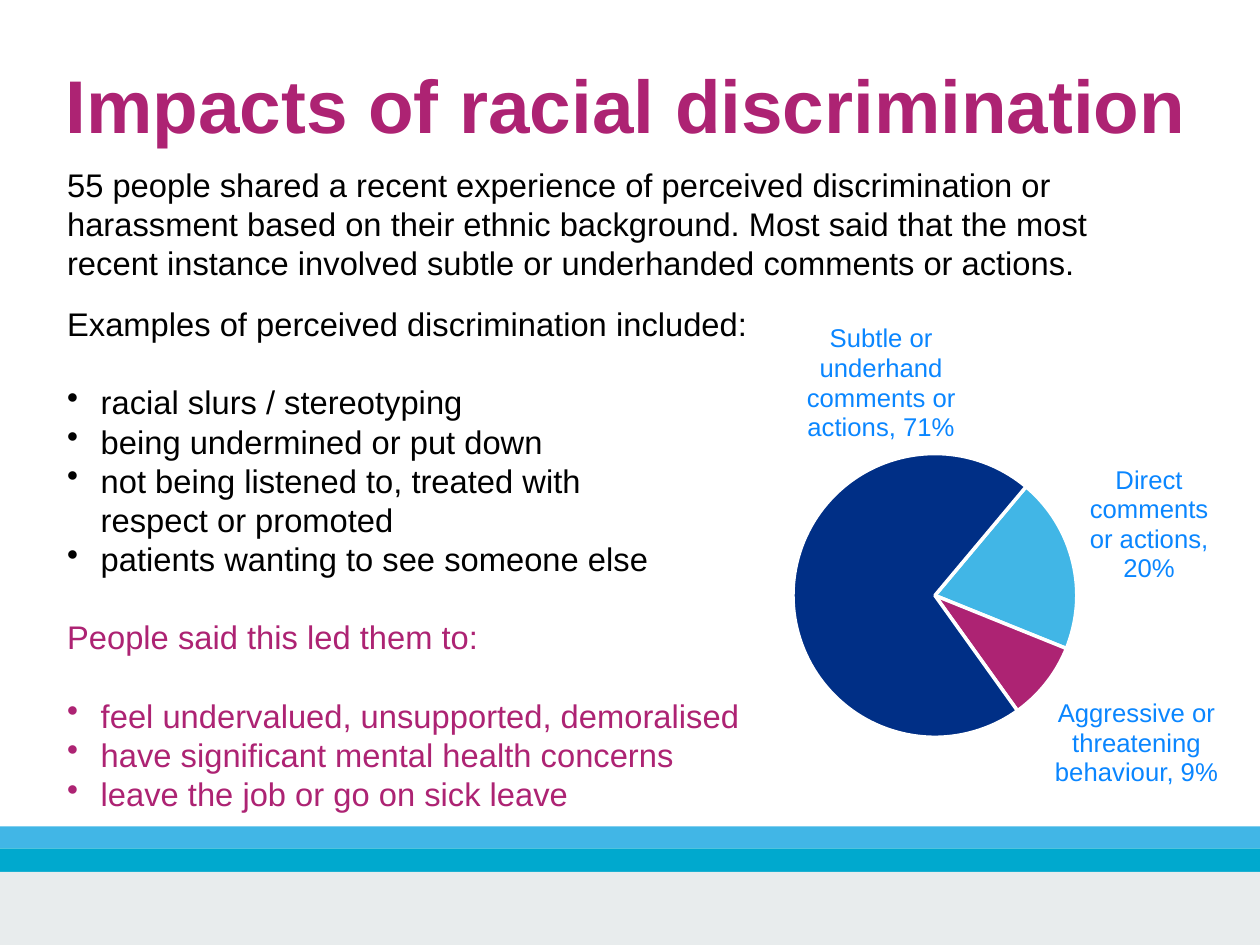
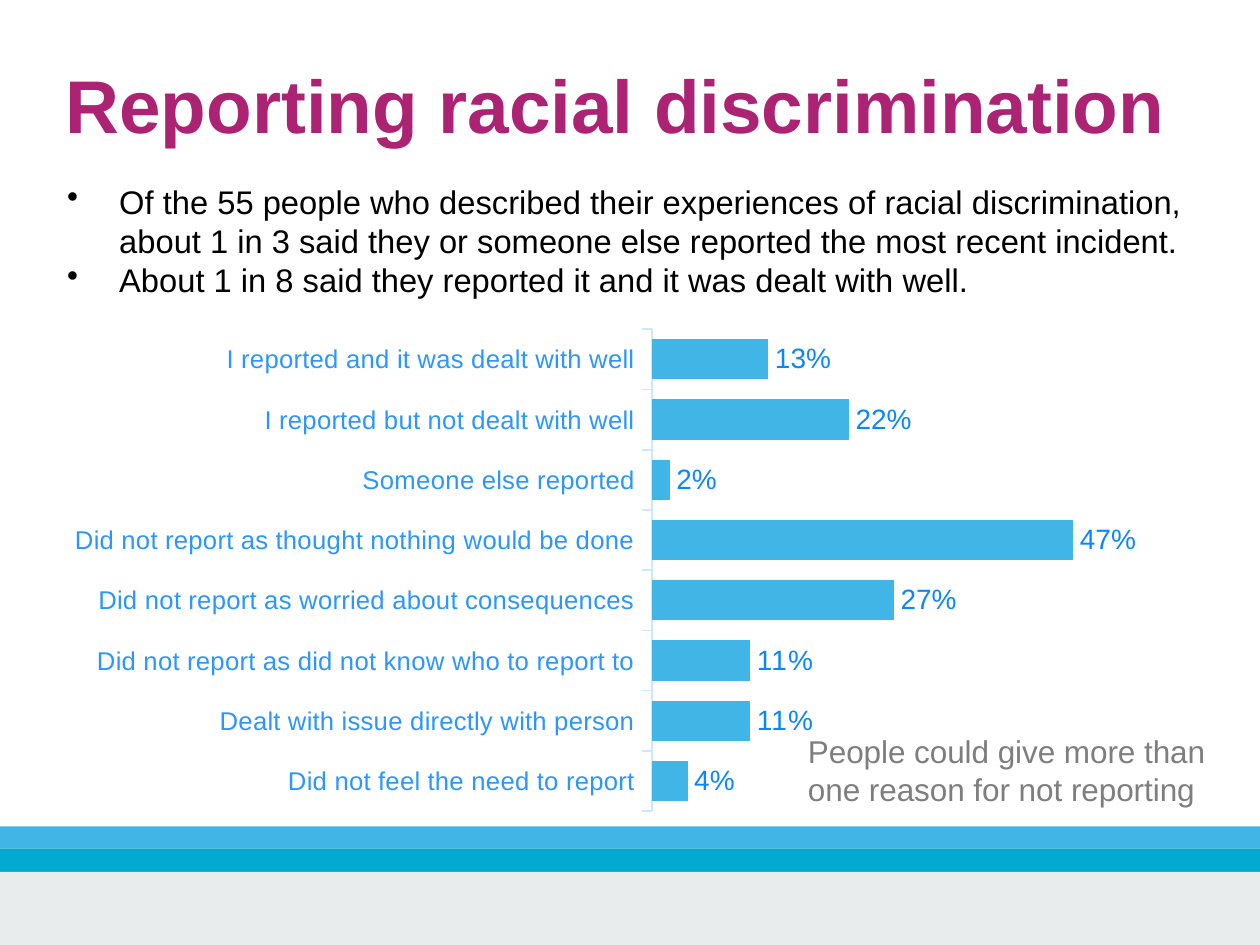
from lxml import etree
from pptx import Presentation
from pptx.chart.data import CategoryChartData
from pptx.dml.color import RGBColor
from pptx.enum import chart as charts, shapes, text
from pptx.oxml.ns import qn
from pptx.util import Inches, Pt

BLACK = RGBColor(0, 0, 0)
WHITE = RGBColor(255, 255, 255)
MAGENTA = RGBColor(0xAD, 0x23, 0x73)
NAVY = RGBColor(0x00, 0x2F, 0x86)
SKY = RGBColor(0x41, 0xB6, 0xE6)
TEAL = RGBColor(0x00, 0xA9, 0xCE)
PALE_GREY = RGBColor(0xE8, 0xEC, 0xED)
GREY = RGBColor(0x7E, 0x7E, 0x7E)
AXIS_BLUE = RGBColor(0xCE, 0xE7, 0xFF)
LABEL_BLUE = RGBColor(0x0A, 0x86, 0xFF)
CATEGORY_BLUE = RGBColor(0x2B, 0x96, 0xFF)

WIDTH = 7.5
HEIGHT = WIDTH * 3 / 4
LEFT = 0.4
SECTION_GAP = 16.7
STYLES = {
    "title": dict(size=Pt(32), bold=True, color=MAGENTA),
    "body": dict(size=Pt(14), color=BLACK),
    "outcome": dict(size=Pt(14), color=MAGENTA),
    "slice": dict(size=Pt(11), color=LABEL_BLUE, spacing=0.96),
    "category": dict(size=Pt(11), color=CATEGORY_BLUE),
    "value": dict(size=Pt(12), color=LABEL_BLUE),
    "note": dict(size=Pt(13.5), color=GREY),
}
# Each band runs down to the top of the next
BANDS = [(4.92, SKY), (5.05, TEAL), (5.19, PALE_GREY)]


def set_font(font, style):
    font.name = "Arial"
    for name, value in STYLES[style].items():
        if name == "color":
            font.color.rgb = value
        elif name != "spacing":
            setattr(font, name, value)


class Deck:
    """Holds the shared style and the slide being built."""

    def __init__(self):
        self.presentation = Presentation()
        self.presentation.slide_width = Inches(WIDTH)
        self.presentation.slide_height = Inches(HEIGHT)
        self.slide = None

    def add_slide(self, title):
        self.slide = self.presentation.slides.add_slide(
            self.presentation.slide_layouts[6])
        bottoms = [top for top, _ in BANDS[1:]] + [HEIGHT]
        for (top, color), bottom in zip(BANDS, bottoms):
            self.add_band(top, bottom - top, color)
        self.add_text((LEFT - 0.01, 0.35, 6.9, 0.56), [(title, "title")])

    def add_band(self, top, height, color):
        band = self.slide.shapes.add_shape(
            shapes.MSO_SHAPE.RECTANGLE, 0, Inches(top),
            Inches(WIDTH), Inches(height))
        band.shadow.inherit = False
        band.fill.solid()
        band.fill.fore_color.rgb = color
        band.line.fill.background()

    def add_text(self, box, paragraphs, align=text.PP_ALIGN.LEFT):
        """Each paragraph is (words, style[, bullet indent[, space before]])."""
        frame = self.slide.shapes.add_textbox(*map(Inches, box)).text_frame
        frame.word_wrap = True
        for side in ("left", "top", "right", "bottom"):
            setattr(frame, f"margin_{side}", 0)
        for number, (words, style, *extra) in enumerate(paragraphs):
            indent, before = (extra + [0, 0])[:2]
            paragraph = frame.add_paragraph() if number else frame.paragraphs[0]
            paragraph.text = words
            paragraph.alignment = align
            paragraph.space_before = Pt(before)
            paragraph.line_spacing = STYLES[style].get("spacing", 1.0)
            for run in paragraph.runs:
                set_font(run.font, style)
            if indent:
                self.add_bullet(paragraph, indent)

    def add_bullet(self, paragraph, indent):
        properties = paragraph._p.get_or_add_pPr()
        properties.set("marL", str(Inches(indent)))
        properties.set("indent", str(-Inches(indent)))
        etree.SubElement(properties, qn("a:buChar")).set("char", "•")

    def add_chart(self, kind, box, plot_box, name, rows):
        """Adds a one-series chart whose plot area fills plot_box."""
        data = CategoryChartData(number_format="0%")
        data.categories = [category for category, _ in rows]
        data.add_series(name, [value for _, value in rows])
        chart = self.slide.shapes.add_chart(
            kind, *map(Inches, box), data).chart
        chart.has_legend = False
        chart.has_title = False
        set_font(chart.font, "category")
        area = chart._chartSpace.chart.plotArea
        for old in area.findall(qn("c:layout")):
            area.remove(old)
        layout = etree.Element(qn("c:layout"))
        area.insert(0, layout)
        manual = etree.SubElement(layout, qn("c:manualLayout"))
        left, top, width, height = box
        x, y, w, h = plot_box
        settings = dict(layoutTarget="inner", xMode="edge", yMode="edge",
                        x=(x - left) / width, y=(y - top) / height,
                        w=w / width, h=h / height)
        for tag, value in settings.items():
            etree.SubElement(manual, qn(f"c:{tag}")).set("val", str(value))
        return chart

    def add_pie(self, box, plot_box, name, rows, colors, angle):
        chart = self.add_chart(
            charts.XL_CHART_TYPE.PIE, box, plot_box, name, rows)
        plot = chart.plots[0]
        plot.vary_by_categories = True
        first = plot._element.find(qn("c:firstSliceAng"))
        if first is None:
            first = etree.SubElement(plot._element, qn("c:firstSliceAng"))
        first.set("val", str(angle))
        for index, color in enumerate(colors):
            slice_format = plot.series[0].points[index].format
            slice_format.fill.solid()
            slice_format.fill.fore_color.rgb = color
            slice_format.line.color.rgb = WHITE
            slice_format.line.width = Pt(1.5)

    def add_bars(self, box, plot_box, name, rows, maximum):
        chart = self.add_chart(
            charts.XL_CHART_TYPE.BAR_CLUSTERED, box, plot_box, name, rows)
        plot = chart.plots[0]
        plot.vary_by_categories = False
        plot.gap_width = 50
        fill = plot.series[0].format.fill
        fill.solid()
        fill.fore_color.rgb = SKY
        # Value labels
        plot.has_data_labels = True
        labels = plot.data_labels
        label_format = dict(
            show_value=True, number_format="0%", number_format_is_linked=False,
            position=charts.XL_LABEL_POSITION.OUTSIDE_END)
        for name, value in label_format.items():
            setattr(labels, name, value)
        set_font(labels.font, "value")
        # Axes
        scale = chart.value_axis
        scale_format = dict(minimum_scale=0, maximum_scale=maximum,
                            has_major_gridlines=False, visible=False)
        for name, value in scale_format.items():
            setattr(scale, name, value)
        axis = chart.category_axis
        axis.reverse_order = True
        axis.major_tick_mark = charts.XL_TICK_MARK.OUTSIDE
        axis.format.line.color.rgb = AXIS_BLUE
        axis.format.line.width = Pt(0.75)
        set_font(axis.tick_labels.font, "category")


def build_impacts(deck):
    deck.add_slide("Impacts of racial discrimination")
    deck.add_text((LEFT, 0.98, 6.66, 0.73), [(
        "55 people shared a recent experience of perceived discrimination or "
        "harassment based on their ethnic background. Most said that the most "
        "recent instance involved subtle or underhanded comments or actions.",
        "body")])
    # Examples and outcomes
    examples = ["racial slurs / stereotyping", "being undermined or put down",
                "not being listened to, treated with\vrespect or promoted",
                "patients wanting to see someone else"]
    outcomes = ["feel undervalued, unsupported, demoralised",
                "have significant mental health concerns",
                "leave the job or go on sick leave"]
    paragraphs = []
    for heading, items, style in (
            ("Examples of perceived discrimination included:", examples, "body"),
            ("People said this led them to:", outcomes, "outcome")):
        paragraphs.append((heading, style, 0, SECTION_GAP if paragraphs else 0))
        paragraphs += [(item, style, 0.2, 0 if number else SECTION_GAP)
                       for number, item in enumerate(items)]
    deck.add_text((LEFT, 1.81, 4.2, 3.05), paragraphs)
    # Pie and its slice labels
    slices = [("Direct comments or actions", 0.20, SKY, (6.45, 2.77, 0.78, 0.72)),
              ("Aggressive or threatening behaviour", 0.09, MAGENTA,
               (6.24, 4.16, 1.05, 0.54)),
              ("Subtle or underhand comments or actions", 0.71, NAVY,
               (4.77, 1.93, 0.95, 0.72))]
    deck.add_pie((4.57, 2.55, 2, 2), (4.72, 2.7, 1.69, 1.69), "Most recent instance",
                 [row[:2] for row in slices], [row[2] for row in slices], 40)
    for words, value, _, box in slices:
        deck.add_text(box, [(f"{words}, {value:.0%}", "slice")],
                      text.PP_ALIGN.CENTER)


def build_reporting(deck):
    deck.add_slide("Reporting racial discrimination")
    deck.add_text((LEFT, 1.08, 6.8, 0.73), [
        ("Of the 55 people who described their experiences of racial "
         "discrimination,\vabout 1 in 3 said they or someone else reported the "
         "most recent incident.", "body", 0.31),
        ("About 1 in 8 said they reported it and it was dealt with well.",
         "body", 0.31)])
    # Share of people by response
    deck.add_bars((0.2, 1.86, 7, 3.06), (3.88, 1.96, 2.67, 2.87), "Response", [
        ("I reported and it was dealt with well", 0.13),
        ("I reported but not dealt with well", 0.22),
        ("Someone else reported", 0.02),
        ("Did not report as thought nothing would be done", 0.47),
        ("Did not report as worried about consequences", 0.27),
        ("Did not report as did not know who to report to", 0.11),
        ("Dealt with issue directly with person", 0.11),
        ("Did not feel the need to report", 0.04)], 0.5)
    deck.add_text((4.81, 4.36, 2.5, 0.47), [
        ("People could give more than\vone reason for not reporting", "note")])


def main():
    deck = Deck()
    build_impacts(deck)
    build_reporting(deck)
    deck.presentation.save("out.pptx")


if __name__ == "__main__":
    main()
